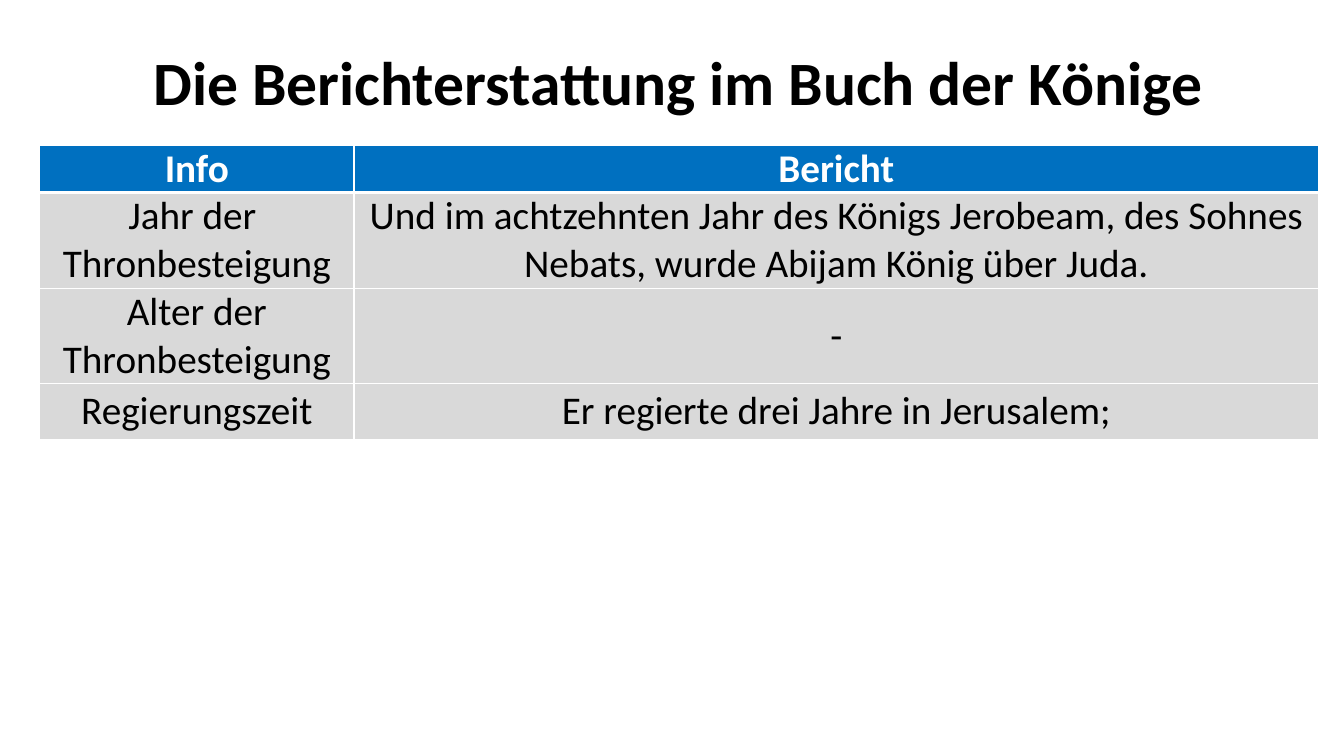
"""Build the slide on reports in the Book of Kings."""
from lxml.etree import SubElement as Sub
from pptx import Presentation as Deck
from pptx.dml.color import RGBColor as Rgb
from pptx.enum.text import MSO_ANCHOR as Anchor, PP_ALIGN as Align
from pptx.oxml.ns import qn
from pptx.util import Cm, Pt

INK = {"black": "000000", "white": "FFFFFF", "blue": "0070C0", "gray": "D9D9D9"}
ROWS = [
    ("Info", "Bericht"),
    ("Jahr der \nThronbesteigung",
     "Und im achtzehnten Jahr des Königs Jerobeam, des Sohnes Nebats, "
     "wurde Abijam König über Juda."),
    ("Alter der Thronbesteigung", "-"),
    ("Regierungszeit", "Er regierte drei Jahre in Jerusalem;"),
]


def write(frame, text, size=28, ink="black", bold=False, space=1.0, font="Calibri"):
    frame.word_wrap = True
    frame.text = text
    for para in frame.paragraphs:
        para.alignment = Align.CENTER
        para.line_spacing = space
        for run in para.runs:
            run.font.name = font
            run.font.size = Pt(size)
            run.font.bold = bold
            run.font.color.rgb = Rgb.from_string(INK[ink])


class Page:
    def __init__(self, slide, ink):
        self.slide = slide
        self.ink = ink

    def title(self, text, left, top, width, height):
        box = self.slide.shapes.add_textbox(Cm(left), Cm(top), Cm(width), Cm(height))
        write(box.text_frame, text, size=44, bold=True, space=0.9)
        box.text_frame.vertical_anchor = Anchor.MIDDLE

    def edge(self, cell, side, width):
        line = Sub(cell._tc.get_or_add_tcPr(), qn(f"a:ln{side}"), w=str(Pt(width)))
        fill = Sub(line, qn("a:solidFill"))
        Sub(fill, qn("a:srgbClr"), val=self.ink["white"])

    def cell(self, cell, text, row):
        head = row == 0
        write(cell.text_frame, text, ink="white" if head else "black", bold=head)
        cell.vertical_anchor = Anchor.MIDDLE
        cell.margin_left = cell.margin_right = Cm(0.36)
        cell.margin_top = cell.margin_bottom = 0
        for side in "LRTB":
            thick = (row, side) in ((0, "B"), (1, "T"))
            self.edge(cell, side, 3 if thick else 1)
        cell.fill.solid()
        cell.fill.fore_color.rgb = Rgb.from_string(self.ink["blue" if head else "gray"])

    def table(self, rows, left, top, wide, high):
        grid = self.slide.shapes.add_table(
            len(high), len(wide), Cm(left), Cm(top), Cm(sum(wide)), Cm(sum(high))).table
        for col, width in zip(grid.columns, wide):
            col.width = Cm(width)
        for row, height in zip(grid.rows, high):
            row.height = Cm(height)
        for r, texts in enumerate(rows):
            for c, text in enumerate(texts):
                self.cell(grid.cell(r, c), text, r)


def main():
    deck = Deck()
    deck.slide_width, deck.slide_height = Cm(33.87), Cm(19.05)
    page = Page(deck.slides.add_slide(deck.slide_layouts[6]), INK)
    page.title("Die Berichterstattung im Buch der Könige", 0.81, 1.02, 32.59, 2.26)
    page.table(ROWS, 1, 3.66, wide=(7.92, 24.31), high=(1.19, 2.41, 2.41, 1.4))
    deck.save("out.pptx")


if __name__ == "__main__":
    main()
